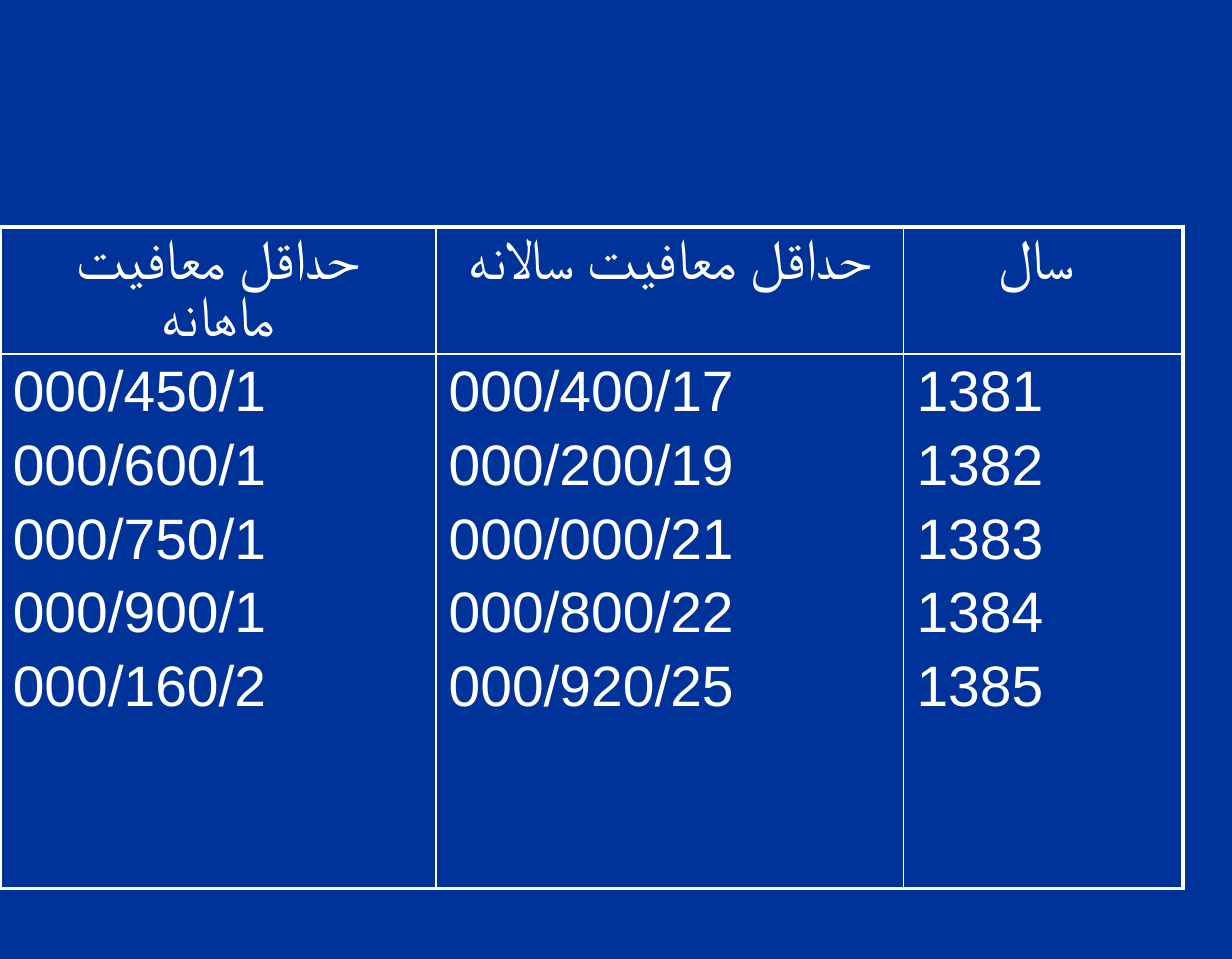
from dataclasses import dataclass

from lxml.etree import SubElement
from pptx import Presentation
from pptx.dml.color import RGBColor
from pptx.enum.text import PP_ALIGN
from pptx.oxml.ns import qn
from pptx.util import Pt


@dataclass(frozen=True)
class Theme:
    background: RGBColor = RGBColor(0x00, 0x33, 0x99)
    foreground: RGBColor = RGBColor(0xFF, 0xFF, 0xFF)
    font: str = "Arial"
    text_size: float = 32
    paragraph_gap: float = 5.4
    outer_line: float = 2.25
    inner_line: float = 1


theme = Theme()


def add_border(cell, side, width):
    """Draw one side (L, R, T or B) of a cell, in the order the schema expects."""
    properties = cell._tc.get_or_add_tcPr()
    line = SubElement(properties, qn(f"a:ln{side}"), w=str(Pt(width)))
    fill = SubElement(line, qn("a:solidFill"))
    SubElement(fill, qn("a:srgbClr"), val=str(theme.foreground))


presentation = Presentation()
presentation.slide_width = Pt(692)
presentation.slide_height = Pt(538.5)

blank_layout = presentation.slide_layouts[6]
slide = presentation.slides.add_slide(blank_layout)
slide.background.fill.solid()
slide.background.fill.fore_color.rgb = theme.background

exemption_columns = [
    ("حداقل معافيت ماهانه", 244.8,
     ["000/450/1", "000/600/1", "000/750/1", "000/900/1", "000/160/2"]),
    ("حداقل معافيت سالانه", 262.8,
     ["000/400/17", "000/200/19", "000/000/21", "000/800/22", "000/920/25"]),
    ("سال ", 157, ["1381", "1382", "1383", "1384", "1385"]),
]
row_heights = [64, 300.2]
last_row = len(row_heights) - 1
last_column = len(exemption_columns) - 1

table_width = sum(width for _, width, _ in exemption_columns)
table = slide.shapes.add_table(
    len(row_heights), len(exemption_columns),
    Pt(0), Pt(127.4), Pt(table_width), Pt(sum(row_heights)),
).table
table.first_row = False
table.horz_banding = False
for row, height in zip(table.rows, row_heights):
    row.height = Pt(height)

for column_index, (heading, width, values) in enumerate(exemption_columns):
    table.columns[column_index].width = Pt(width)
    for row_index, lines in enumerate([[heading], values]):
        cell = table.cell(row_index, column_index)
        outer_sides = {
            "L": column_index == 0,
            "R": column_index == last_column,
            "T": row_index == 0,
            "B": row_index == last_row,
        }
        for side, is_outer in outer_sides.items():
            add_border(cell, side, theme.outer_line if is_outer else theme.inner_line)
        cell.fill.background()

        text_frame = cell.text_frame
        for line_index, text in enumerate(lines):
            paragraph = text_frame.add_paragraph() if line_index else text_frame.paragraphs[0]
            paragraph.alignment = PP_ALIGN.LEFT if row_index else PP_ALIGN.CENTER
            paragraph.space_before = Pt(theme.paragraph_gap)
            run = paragraph.add_run()
            run.text = text
            run.font.name = theme.font
            run.font.size = Pt(theme.text_size)
            run.font.bold = False
            run.font.color.rgb = theme.foreground

presentation.save("out.pptx")
